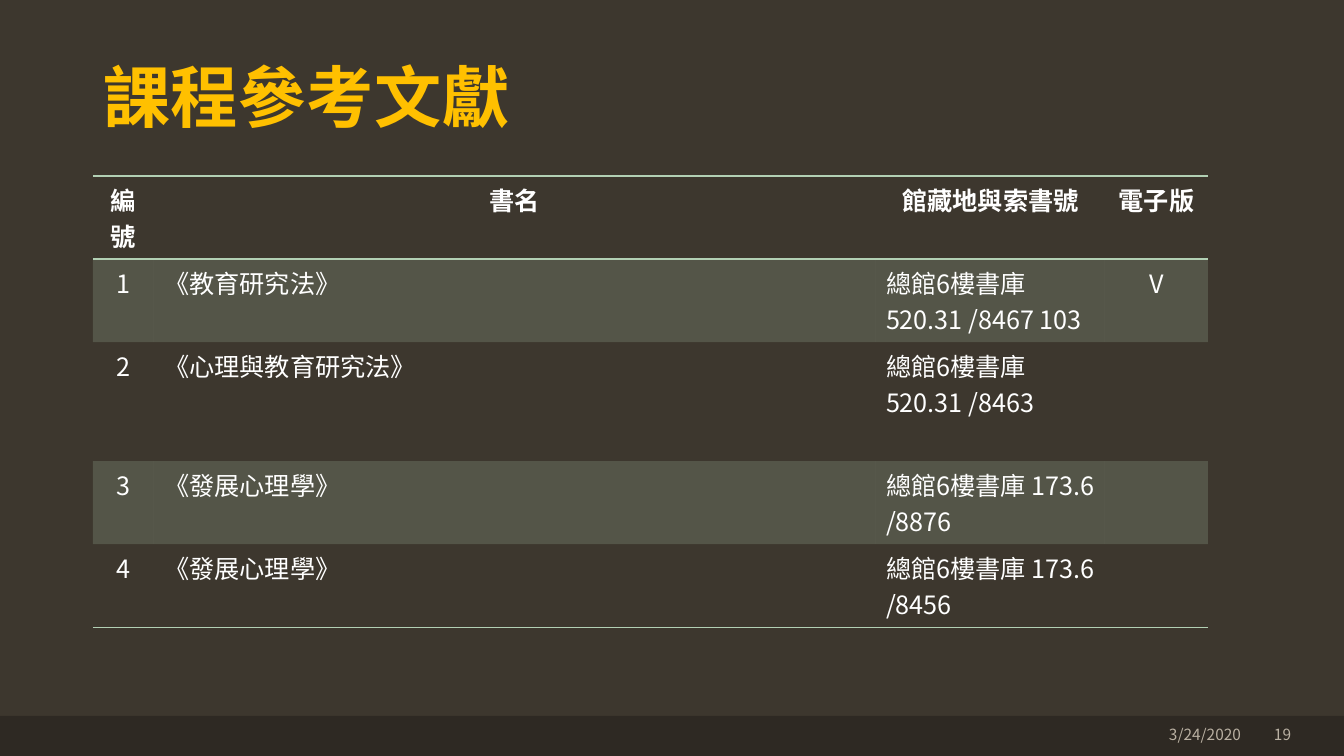
from lxml.etree import SubElement as Sub
from pptx import Presentation
from pptx.dml.color import RGBColor
from pptx.enum.shapes import MSO_SHAPE as Shape
from pptx.enum.text import MSO_ANCHOR as Anchor, MSO_AUTO_SIZE as Auto, PP_ALIGN as Align
from pptx.oxml import parse_xml
from pptx.oxml.ns import nsdecls, qn
from pptx.util import Pt

PX = 9071.43  # EMU in one px
SANS = "Noto Sans CJK SC"
MINT = "B2D0B4"


def box(*nums):
    return [round(n * PX) for n in nums]


def write(para, text, size, color, face=SANS, bold=False, align=Align.LEFT):
    """Add one styled run and return its properties element."""
    para.alignment = align
    run = para.add_run()
    run.text = text
    font = run.font
    font.size, font.bold, font.name = Pt(size), bold, face
    font.color.rgb = RGBColor.from_string(color)
    props = run._r.get_or_add_rPr()
    Sub(props, qn("a:ea"), typeface=face)
    return props


prs = Presentation()
prs.slide_width, prs.slide_height = box(1344, 756)
slide = prs.slides.add_slide(prs.slide_layouts[5])
back = slide.background.fill
back.solid()
back.fore_color.rgb = RGBColor.from_string("3D372E")

# Footer band
band = slide.shapes.add_shape(Shape.RECTANGLE, *box(0, 716, 1344, 40))
band.shadow.inherit = False
band.fill.solid()
band.fill.fore_color.rgb = RGBColor.from_string("2E2923")
band.line.fill.background()

# Title
title = slide.shapes.title
title.left, title.top, title.width, title.height = box(93, 16, 1159, 126)
frame = title.text_frame
frame.auto_size, frame.vertical_anchor = Auto.NONE, Anchor.BOTTOM
head = frame.paragraphs[0]
head.line_spacing = 0.9
props = write(head, "課程參考文獻", 48, "FFC000", bold=True)
props.set("spc", "50")
props.insert(0, parse_xml(
    f'<a:ln {nsdecls("a")} w="11430"><a:solidFill><a:srgbClr val="00B0F0"/>'
    '</a:solidFill></a:ln>'))

# Book table
rows = [
    ("編號", "書名", "館藏地與索書號", "電子版"),
    ("1", "《教育研究法》", "總館6樓書庫\n520.31 /8467 103", "V"),
    ("2", "《心理與教育研究法》", "總館6樓書庫 520.31 /8463", ""),
    ("3", "《發展心理學》", "總館6樓書庫 173.6 /8876", ""),
    ("4", "《發展心理學》", "總館6樓書庫 173.6 /8456", ""),
]
widths = [61, 722, 229, 103]
heights = [83, 83, 119, 83, 83]
last = len(rows) - 1
books = slide.shapes.add_table(
    len(rows), len(widths), *box(93, 176, sum(widths), sum(heights))).table
books.first_row = books.horz_banding = False
style = books._tbl.tblPr.find(qn("a:tableStyleId"))
style.text = "{2D5ABB26-0587-4C30-8999-92F81FD0307C}"
for col, width in zip(books.columns, box(*widths)):
    col.width = width
for row, height in zip(books.rows, box(*heights)):
    row.height = height

for r, row in enumerate(rows):
    sides = {0: ["lnT", "lnB"], last: ["lnB"]}.get(r, [])
    for c, text in enumerate(row):
        cell = books.cell(r, c)
        align = Align.CENTER if r == 0 or c in (0, 3) else Align.LEFT
        frame = cell.text_frame
        for i, line in enumerate(text.split("\n") if text else []):
            para = frame.add_paragraph() if i else frame.paragraphs[0]
            write(para, line, 18, "FFFFFF", bold=r == 0, align=align)
        props = cell._tc.get_or_add_tcPr()
        if r % 2:
            cell.fill.solid()
            cell.fill.fore_color.rgb = RGBColor.from_string(MINT)
            Sub(props.find(".//" + qn("a:srgbClr")), qn("a:alpha"), val="20000")
        else:
            cell.fill.background()
        for i, side in enumerate(sides):
            props.insert(i, parse_xml(
                f'<a:{side} {nsdecls("a")} w="12700"><a:solidFill>'
                f'<a:srgbClr val="{MINT}"/></a:solidFill></a:{side}>'))

# Date and page number
for text, left, width in [("3/24/2020", 1068, 183), ("19", 1252, 49)]:
    note = slide.shapes.add_textbox(*box(left, 722, width, 25))
    frame = note.text_frame
    frame.word_wrap, frame.vertical_anchor = True, Anchor.MIDDLE
    write(frame.paragraphs[0], text, 11, "BAB1A3", "Noto Sans CJK TC", align=Align.RIGHT)

prs.save("out.pptx")
